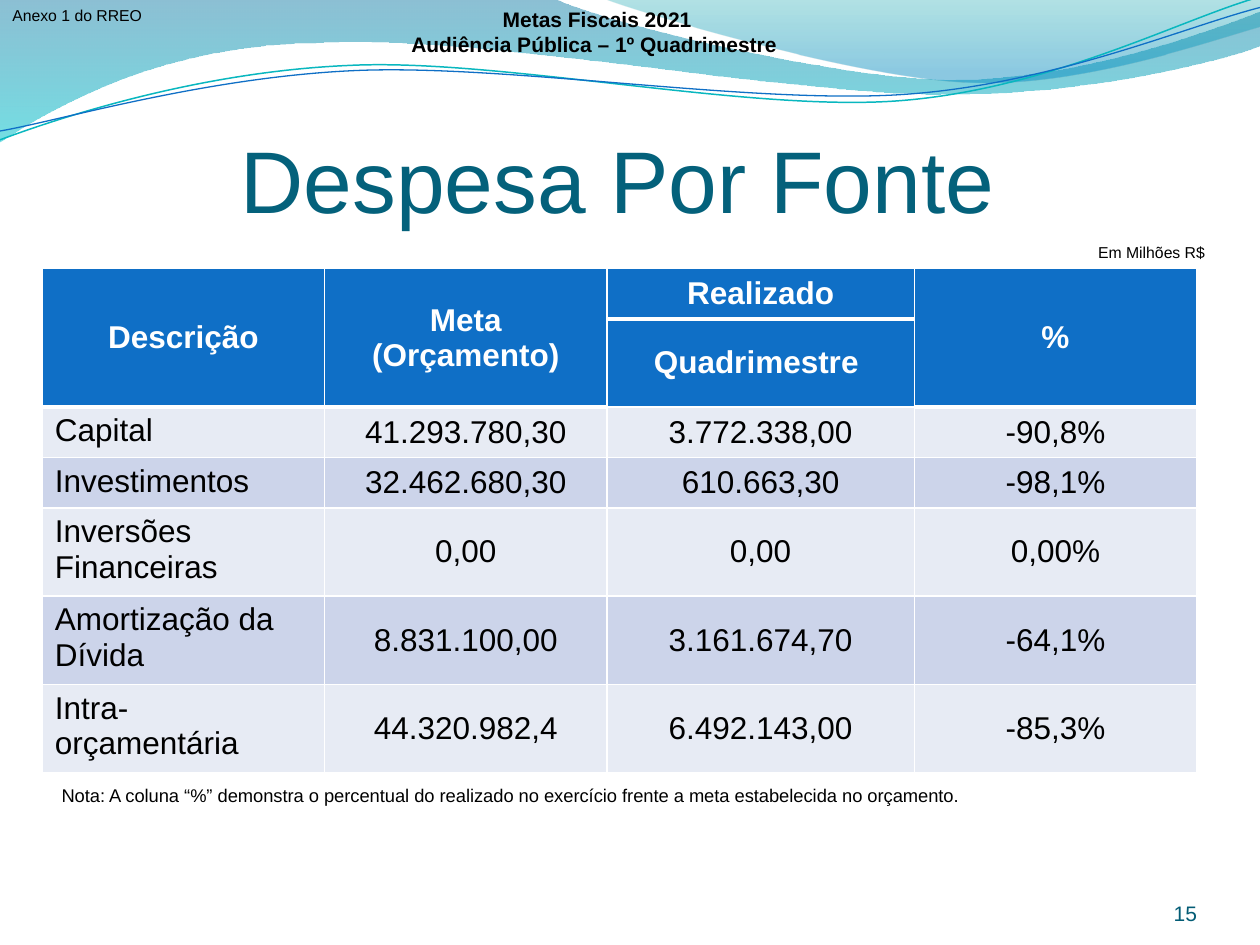
from math import cos, radians, sin

from lxml.etree import SubElement
from pptx import Presentation
from pptx.dml.color import RGBColor
from pptx.enum.text import MSO_ANCHOR, MSO_AUTO_SIZE, PP_ALIGN
from pptx.oxml.ns import qn
from pptx.util import Pt

THEME = dict(
    font="Arial", title="04617B", page="035C75", text="000000", white="FFFFFF",
    header="0F6FC6", bands=("E7EBF4", "CCD4EA"), teal="09B7BF",
    title_size=50, table_size=18, heading_size=12, note_size=10.5, label_size=9,
    thin=0.96, thick=3,
)

TITLE = "Despesa Por Fonte "
HEADING = ["Metas Fiscais 2021", "Audiência Pública – 1º Quadrimestre "]
ANNEX = "Anexo 1 do RREO"
UNIT = "Em Milhões R$"
NOTE = ("Nota: A coluna “%” demonstra o percentual do realizado no exercício "
        "frente a meta estabelecida no orçamento.")
PAGE = "15"

ROWS = [
    ("Descrição", "Meta (Orçamento)", "Realizado", "%"),
    ("", "", "Quadrimestre ", ""),
    ("Capital", "41.293.780,30", "3.772.338,00", "-90,8%"),
    ("Investimentos", "32.462.680,30", "610.663,30", "-98,1%"),
    ("Inversões Financeiras", "0,00", "0,00", "0,00%"),
    ("Amortização da Dívida", "8.831.100,00", "3.161.674,70", "-64,1%"),
    ("Intra-orçamentária", "44.320.982,4", "6.492.143,00", "-85,3%"),
]
HEADER_ROWS = 2
SPLIT_COLUMN = 2
COLUMN_WIDTHS = (161.3, 161.3, 175.7, 161.3)
ONE_LINE, TWO_LINES = 28.8, 50.4
ROW_HEIGHTS = (ONE_LINE, TWO_LINES, ONE_LINE, ONE_LINE) + (TWO_LINES,) * 3

# Outlines in points: a single pair is a straight step, three pairs are a Bézier curve.
BANDS = [
    dict(start=(0, 0), steps=[
        [(316.8, -0.7)],
        [(342.7, 12.2), (478.1, 45.4), (545.8, 45.4)],
        [(614.2, 45.4), (689.8, 18.7), (720, 6.5)],
        [(720.7, 25.9)],
        [(707.8, 31.7), (626.4, 54.7), (537.1, 54)],
        [(447.8, 54), (275, 20.2), (185, 24.5)],
        [(92.9, 25.2), (33.1, 59.8), (-0.7, 81.4)],
        [(0, 0)],
    ], stops=[(0, "0074A0", 45), (1, "00C4CD", 55)], angle=270),
    dict(start=(344.9, -0.7), steps=[
        [(366.5, 7.9), (491, 44.6), (553.7, 46.8)],
        [(616.3, 49.7), (691.9, 23), (720, 15.1)],
        [(720, 0)],
        [(344.9, -0.7)],
    ], stops=[(0.2, "008ABF", 45), (1, "00A0A8", 30)], angle=90),
]
WAVES = [
    dict(start=(0, 79.9), steps=[
        [(34.6, 67), (113.8, 41), (199.4, 37.4)],
        [(284.4, 33.1), (427, 64.1), (513.4, 57.6)],
        [(599.8, 51.1), (675.4, 10.8), (718.6, -1.4)],
    ], center=(359.3, 41.4), color=THEME["teal"], width=0.85),
    dict(start=(0, 74.9), steps=[
        [(33.8, 69.1), (118.1, 43.9), (203.8, 40.3)],
        [(290.2, 36.7), (429.8, 59.8), (516.2, 54)],
        [(601.9, 48.2), (677.5, 15.1), (720, 4.3)],
    ], center=(359.6, 42.5), color=THEME["header"], width=0.75),
]
WAVE_TILT = 2.7


def rgb(color):
    return RGBColor.from_string(color)


def write(frame, text, *, size, color=THEME["text"], bold=False, align=PP_ALIGN.LEFT):
    lines = [text] if isinstance(text, str) else text
    for index, line in enumerate(lines):
        paragraph = frame.paragraphs[0] if index == 0 else frame.add_paragraph()
        paragraph.alignment = align
        run = paragraph.add_run()
        run.text = line
        run.font.name = THEME["font"]
        run.font.size = Pt(size)
        run.font.bold = bold
        run.font.color.rgb = rgb(color)


def add_label(slide, box, text, *, wrap=True, anchor=MSO_ANCHOR.TOP, inset=(7.2, 3.6), **style):
    frame = slide.shapes.add_textbox(*map(Pt, box)).text_frame
    frame.word_wrap = wrap
    frame.vertical_anchor = anchor
    frame.margin_left = frame.margin_right = Pt(inset[0])
    frame.margin_top = frame.margin_bottom = Pt(inset[1])
    write(frame, text, **style)


def add_outline(shapes, start, steps, close):
    """Build the outline through all its points, then join each triple into a curve."""
    builder = shapes.build_freeform(*map(Pt, start))
    builder.add_line_segments([(Pt(x), Pt(y)) for step in steps for x, y in step], close=close)
    outline = builder.convert_to_shape()
    outline.shadow.inherit = False
    segments = iter(list(outline.element.iter(qn("a:lnTo"))))
    for step in steps:
        parts = [next(segments) for _ in step]
        if len(parts) == 3:
            parent = parts[0].getparent()
            curve = SubElement(parent, qn("a:cubicBezTo"))
            parts[0].addprevious(curve)
            for part in parts:
                curve.append(part[0])
                parent.remove(part)
    return outline


def add_band(shapes, start, steps, stops, angle):
    band = add_outline(shapes, start, steps, close=True)
    band.line.fill.background()
    band.fill.gradient()
    band.fill.gradient_angle = angle
    for stop, (position, color, _) in zip(band.fill.gradient_stops, stops):
        stop.position = position
        stop.color.rgb = rgb(color)
    color_tags = list(band.element.spPr.iter(qn("a:srgbClr")))
    for tag, (_, _, opacity) in zip(color_tags, stops):
        SubElement(tag, qn("a:alpha"), val=str(opacity * 1000))


def add_wave(shapes, start, steps, center, color, width):
    """Draw the wave level, then tilt it about its center."""
    tilt = radians(WAVE_TILT)

    def level(point):
        dx, dy = point[0] - center[0], point[1] - center[1]
        return (center[0] + dx * cos(tilt) - dy * sin(tilt),
                center[1] + dx * sin(tilt) + dy * cos(tilt))

    wave = add_outline(shapes, level(start), [list(map(level, step)) for step in steps],
                       close=False)
    wave.rotation = -WAVE_TILT
    wave.fill.background()
    wave.line.color.rgb = rgb(color)
    wave.line.width = Pt(width)


def set_borders(cell, **widths):
    properties = cell._tc.get_or_add_tcPr()
    for side in "LRTB":
        width = widths.get(side, THEME["thin"])
        line = SubElement(properties, qn(f"a:ln{side}"), w=str(int(Pt(width))))
        SubElement(SubElement(line, qn("a:solidFill")), qn("a:srgbClr"), val=THEME["white"])


def edge_below(row, column):
    """Header cells end in a thick line, except under the split column's last one."""
    thick = row == 0 or (row == 1 and column != SPLIT_COLUMN)
    return THEME["thick"] if thick else THEME["thin"]


def add_expense_table(slide):
    table = slide.shapes.add_table(
        len(ROWS), len(COLUMN_WIDTHS), Pt(24.2), Pt(153.4),
        Pt(sum(COLUMN_WIDTHS)), Pt(sum(ROW_HEIGHTS))).table
    for column, width in zip(table.columns, COLUMN_WIDTHS):
        column.width = Pt(width)
    for row, height in zip(table.rows, ROW_HEIGHTS):
        row.height = Pt(height)
    for c in range(len(COLUMN_WIDTHS)):
        if c != SPLIT_COLUMN:
            table.cell(0, c).merge(table.cell(HEADER_ROWS - 1, c))
    for r, texts in enumerate(ROWS):
        header = r < HEADER_ROWS
        for c, text in enumerate(texts):
            cell = table.cell(r, c)
            set_borders(cell, B=edge_below(r, c),
                        T=edge_below(r - 1, c) if r else THEME["thin"])
            cell.fill.solid()
            cell.fill.fore_color.rgb = rgb(THEME["header"] if header else THEME["bands"][r % 2])
            name = c == 0 and not header
            cell.vertical_anchor = MSO_ANCHOR.TOP if name else MSO_ANCHOR.MIDDLE
            if text:
                write(cell.text_frame, text, size=THEME["table_size"], bold=header,
                      color=THEME["white" if header else "text"],
                      align=PP_ALIGN.LEFT if name else PP_ALIGN.CENTER)


def add_title(slide):
    title = slide.shapes.title
    title.left, title.top, title.width, title.height = map(Pt, (36, 55.4, 648, 90))
    frame = title.text_frame
    frame.auto_size = MSO_AUTO_SIZE.NONE
    frame.vertical_anchor = MSO_ANCHOR.MIDDLE
    frame.margin_left = frame.margin_right = frame.margin_bottom = 0
    frame.margin_top = Pt(3.6)
    write(frame, TITLE, size=THEME["title_size"], color=THEME["title"], align=PP_ALIGN.CENTER)


def main():
    deck = Presentation()
    deck.slide_width, deck.slide_height = Pt(720), Pt(540)
    slide = deck.slides.add_slide(deck.slide_layouts[5])
    for band in BANDS:
        add_band(slide.shapes, **band)
    wave_group = slide.shapes.add_group_shape()
    for wave in WAVES:
        add_wave(wave_group.shapes, **wave)
    add_title(slide)
    add_expense_table(slide)
    add_label(slide, (624.2, 500.4, 59.8, 28.8), PAGE, size=THEME["heading_size"],
              color=THEME["page"], align=PP_ALIGN.RIGHT, anchor=MSO_ANCHOR.BOTTOM, inset=(0, 0))
    add_label(slide, (620.2, 135.4, 75.6, 18), UNIT, wrap=False,
              size=THEME["label_size"], align=PP_ALIGN.CENTER)
    add_label(slide, (0, 0, 97.9, 18), ANNEX, wrap=False, size=THEME["label_size"])
    add_label(slide, (28.1, 444.6, 599, 19.4), NOTE, size=THEME["note_size"])
    add_label(slide, (219.2, 0, 244.1, 36), HEADING, size=THEME["heading_size"], bold=True,
              align=PP_ALIGN.CENTER, anchor=MSO_ANCHOR.MIDDLE)
    deck.save("out.pptx")


if __name__ == "__main__":
    main()
